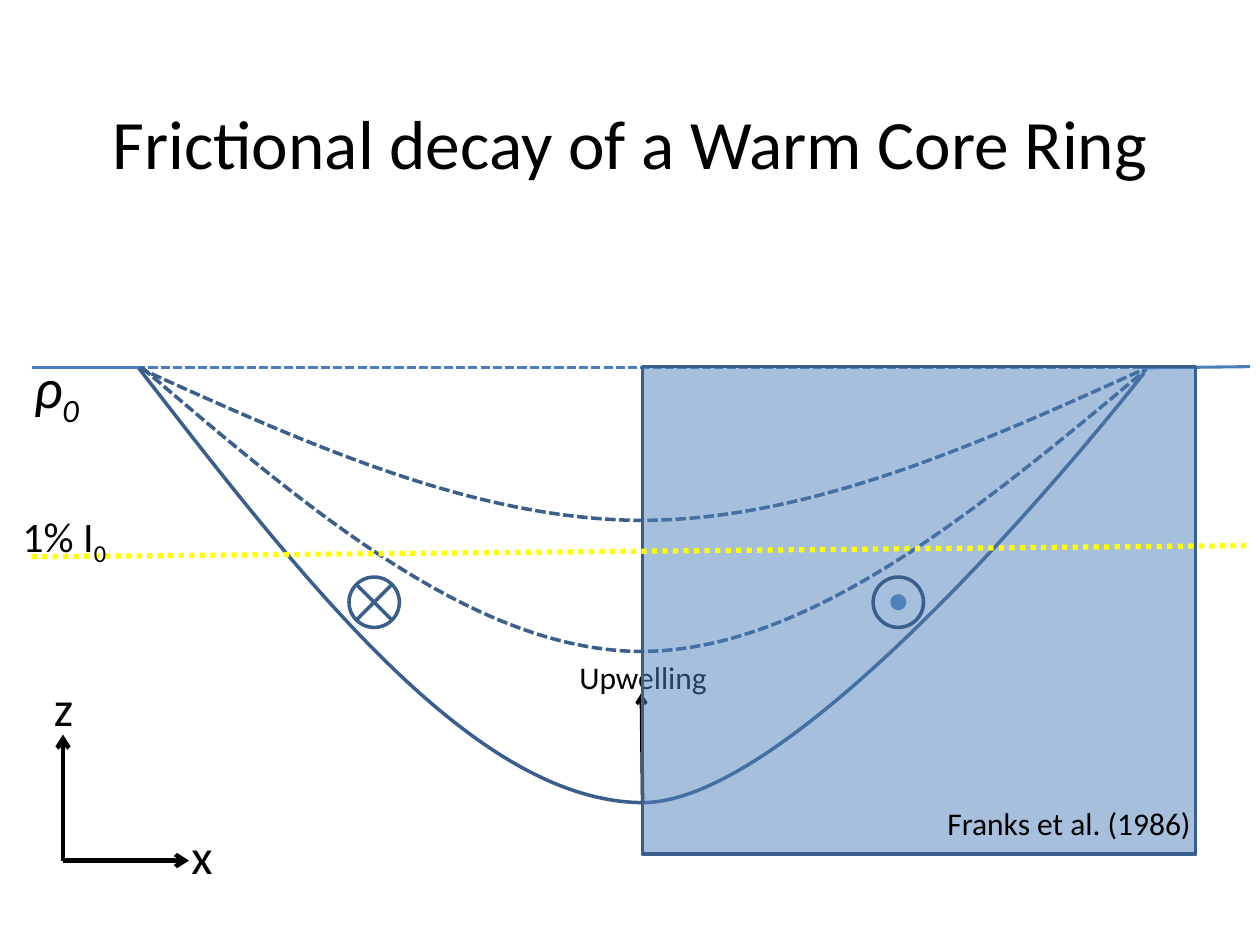
from dataclasses import dataclass

from lxml import etree
from pptx import Presentation
from pptx import util as u
from pptx.dml.color import RGBColor
from pptx.enum import dml, shapes, text
from pptx.oxml.ns import qn


@dataclass(frozen=True)
class Theme:
    font: str = "Calibri"
    black: RGBColor = RGBColor(0x00, 0x00, 0x00)
    surface: RGBColor = RGBColor(0x4B, 0x7E, 0xBC)
    outline: RGBColor = RGBColor(0x3A, 0x5F, 0x8C)
    water: RGBColor = RGBColor(0x4F, 0x81, 0xBD)
    light: RGBColor = RGBColor(0xFF, 0xFF, 0x00)
    title_size: float = 39.6
    density_size: int = 32
    axis_size: int = 28
    light_size: int = 24
    note_size: int = 18


theme = Theme()
DASH = dml.MSO_LINE.SQUARE_DOT
DOT = dml.MSO_LINE.ROUND_DOT
PRESET = shapes.MSO_SHAPE

presentation = Presentation()
presentation.slide_width = u.Inches(10)
presentation.slide_height = u.Inches(7.5)
slide = presentation.slides.add_slide(presentation.slide_layouts[5])


def add_line(start, end, color, width, dash=None, arrow=False):
    line = slide.shapes.add_connector(
        shapes.MSO_CONNECTOR.STRAIGHT, *map(u.Inches, start + end))
    line.line.color.rgb = color
    line.line.width = u.Pt(width)
    if dash:
        line.line.dash_style = dash
    if arrow:
        etree.SubElement(line.line._get_or_add_ln(), qn("a:tailEnd"), type="arrow")
    etree.SubElement(line._element.spPr, qn("a:effectLst"))


def add_label(box, words, size, subscript=None, italic=False):
    label = slide.shapes.add_textbox(*map(u.Inches, box))
    label.text_frame.word_wrap = False
    label.text_frame.auto_size = text.MSO_AUTO_SIZE.SHAPE_TO_FIT_TEXT
    paragraph = label.text_frame.paragraphs[0]
    paragraph.font.name = theme.font
    paragraph.font.size = u.Pt(size)
    paragraph.font.italic = italic
    paragraph.font.color.rgb = theme.black
    paragraph.add_run().text = words
    if subscript:
        run = paragraph.add_run()
        run.text = subscript
        run.font._element.set("baseline", "-25000")


# Title
title = slide.shapes.title
title.left, title.top, title.width, title.height = map(u.Inches, (0.5, 0.5, 9, 1.25))
title.text_frame.text = "Frictional decay of a Warm Core Ring"
title.text_frame.vertical_anchor = text.MSO_ANCHOR.MIDDLE
paragraph = title.text_frame.paragraphs[0]
paragraph.alignment = text.PP_ALIGN.CENTER
paragraph.font.name = theme.font
paragraph.font.size = u.Pt(theme.title_size)
paragraph.font.color.rgb = theme.black

# Flattened surface, then the ring boundary at three stages of decay
add_line((1.08, 2.92), (9.17, 2.92), theme.surface, 1.75, DASH)

# Each boundary is a start point followed by two cubic Bezier segments
boundaries = [
    ([(1.1, 2.92), (2.43, 4.64), (3.77, 6.36), (5.1, 6.37),
      (6.43, 6.37), (9.08, 2.96), (9.08, 2.96)], None),
    ([(1.13, 2.92), (2.44, 4.04), (3.76, 5.16), (5.08, 5.17),
      (6.41, 5.17), (7.76, 4.05), (9.1, 2.93)], DASH),
    ([(1.1, 2.92), (2.43, 3.52), (3.75, 4.12), (5.08, 4.13),
      (6.42, 4.13), (7.75, 3.53), (9.08, 2.93)], DASH),
]
for controls, dash in boundaries:
    start, *points = [(u.Inches(x), u.Inches(y)) for x, y in controls]
    builder = slide.shapes.build_freeform(*start)
    builder.add_line_segments(points, close=False)
    boundary = builder.convert_to_shape()

    # Every three straight segments become one cubic curve
    straight = list(boundary._element.iter(qn("a:lnTo")))
    outline = straight[0].getparent()
    for first in range(0, len(straight), 3):
        curve = etree.SubElement(outline, qn("a:cubicBezTo"))
        for segment in straight[first:first + 3]:
            curve.append(segment[0])
            outline.remove(segment)

    boundary.shadow.inherit = False
    boundary.fill.background()
    boundary.line.color.rgb = theme.outline
    boundary.line.width = u.Pt(2)
    if dash:
        boundary.line.dash_style = dash

# Undisturbed surface on both sides
add_line((0.25, 2.92), (1.1, 2.92), theme.surface, 1.75)
add_line((9.07, 2.92), (9.92, 2.91), theme.surface, 1.75)

# Upwelling and axes
add_line((5.1, 6.37), (5.09, 5.5), theme.black, 2, arrow=True)
add_label((4.5, 5.17, 1.23, 0.4), "Upwelling", theme.note_size)
for axis_end in ((1.5, 6.83), (0.5, 5.83)):
    add_line((0.5, 6.83), axis_end, theme.black, 2.5, arrow=True)
add_label((1.42, 6.5, 0.37, 0.57), "x", theme.axis_size)
add_label((0.33, 5.33, 0.36, 0.57), "z", theme.axis_size)

# Translucent panel over the right half
panel = slide.shapes.add_shape(PRESET.RECTANGLE, *map(u.Inches, (5.1, 2.91, 4.39, 3.87)))
panel.shadow.inherit = False
panel.fill.solid()
panel.fill.fore_color.rgb = theme.water
panel_color = panel._element.spPr.find(qn("a:solidFill")).find(qn("a:srgbClr"))
etree.SubElement(panel_color, qn("a:alpha"), val="50000")
panel.line.color.rgb = theme.outline
panel.line.width = u.Pt(2)
add_label((7.42, 6.33, 2.15, 0.4), "Franks et al. (1986)", theme.note_size)

# Density and light level
add_label((0.17, 2.75, 0.58, 0.64), "ρ", theme.density_size, "0", italic=True)
add_line((0.25, 4.42), (9.92, 4.33), theme.light, 3, DOT)
add_label((0.08, 4, 0.89, 0.5), "1% I", theme.light_size, "0")

# Flow into the page on the left, out of the page on the right
flow_marks = [
    (PRESET.FLOWCHART_SUMMING_JUNCTION, 2.77, 4.58, 0.4, None, theme.outline),
    (PRESET.OVAL, 6.93, 4.58, 0.4, None, theme.outline),
    (PRESET.OVAL, 7.08, 4.73, 0.1, theme.water, theme.water),
]
for preset, left, top, size, fill, line_color in flow_marks:
    mark = slide.shapes.add_shape(preset, *map(u.Inches, (left, top, size, size)))
    mark.shadow.inherit = False
    if fill:
        mark.fill.solid()
        mark.fill.fore_color.rgb = fill
    else:
        mark.fill.background()
    mark.line.color.rgb = line_color
    mark.line.width = u.Pt(2)

presentation.save("out.pptx")
